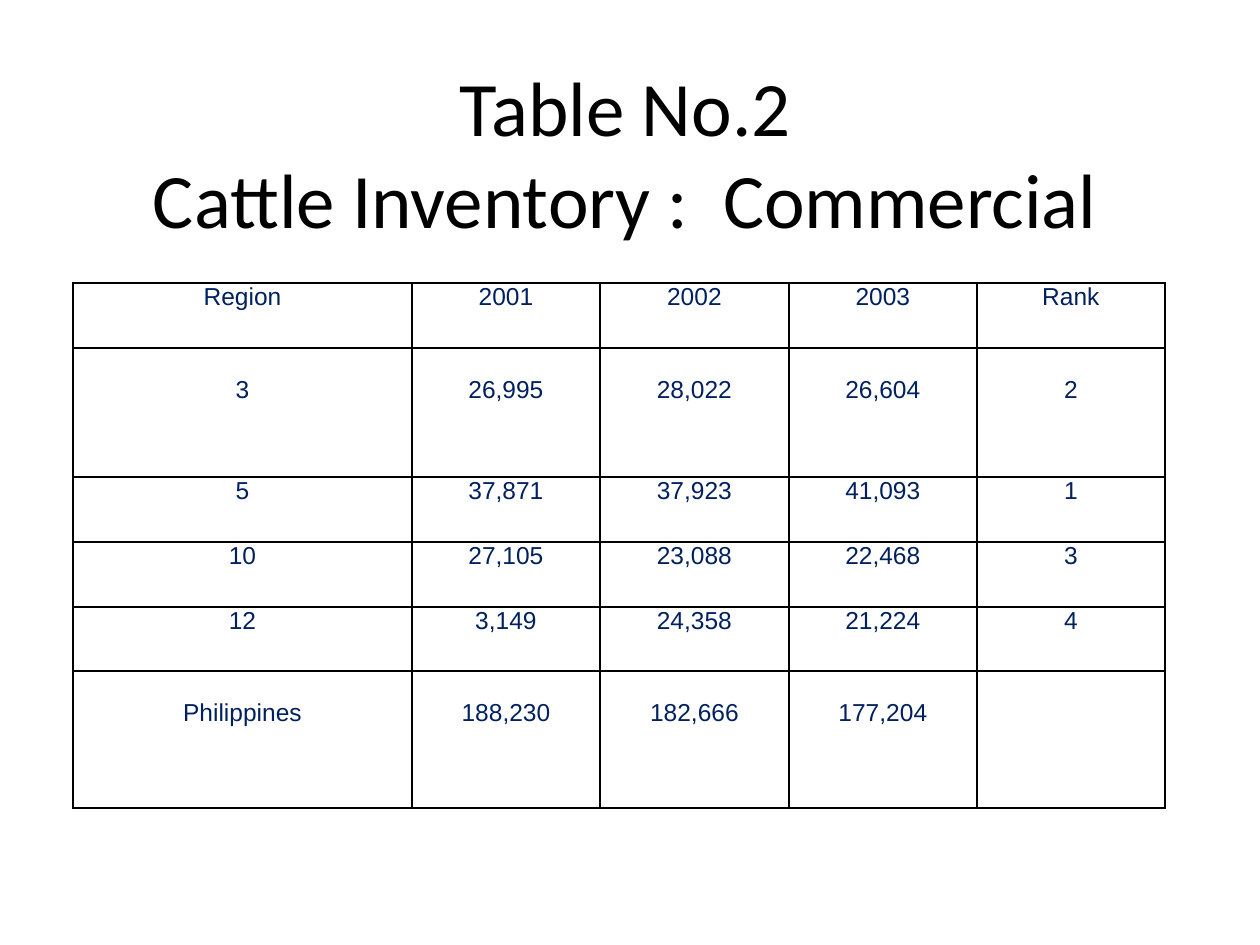
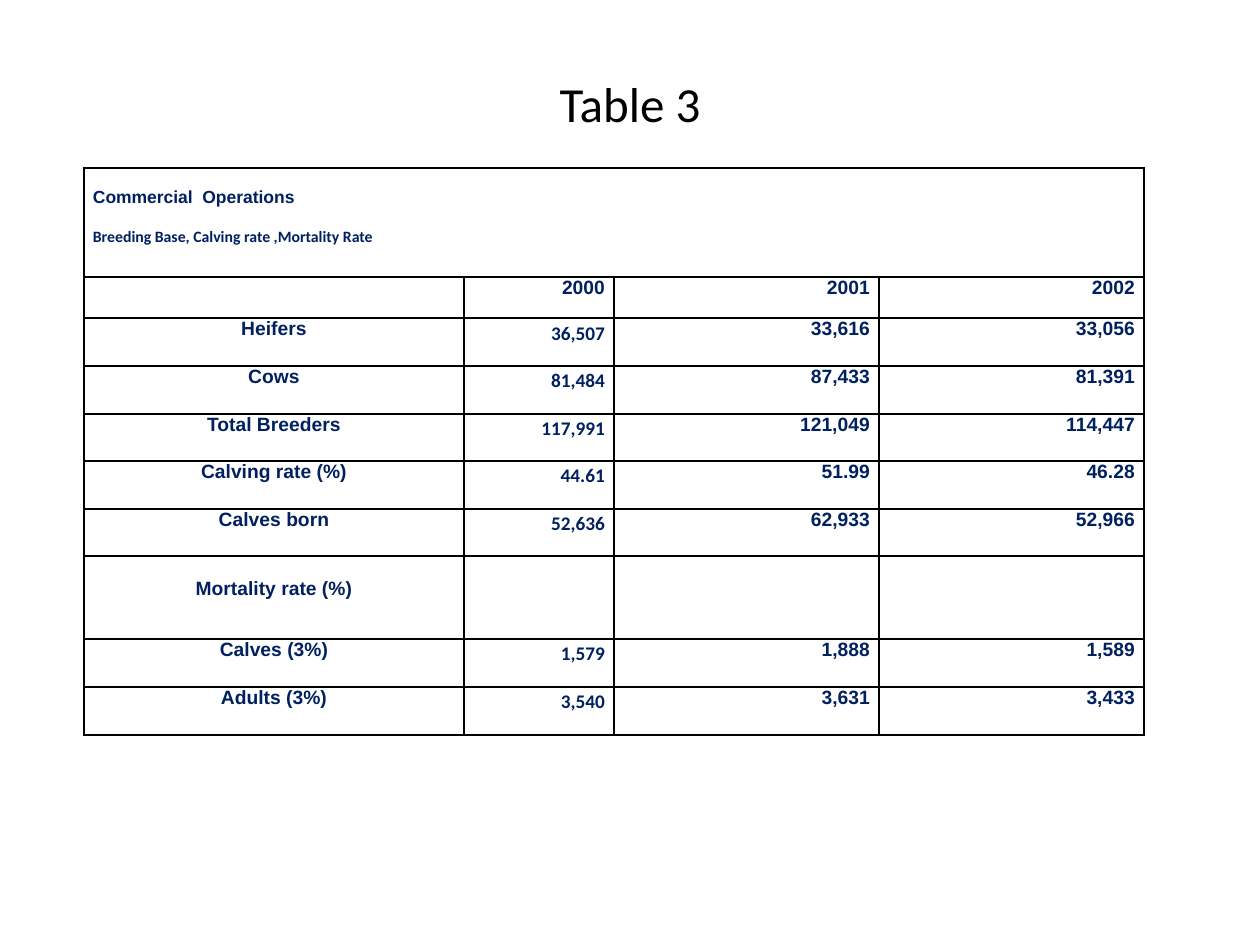
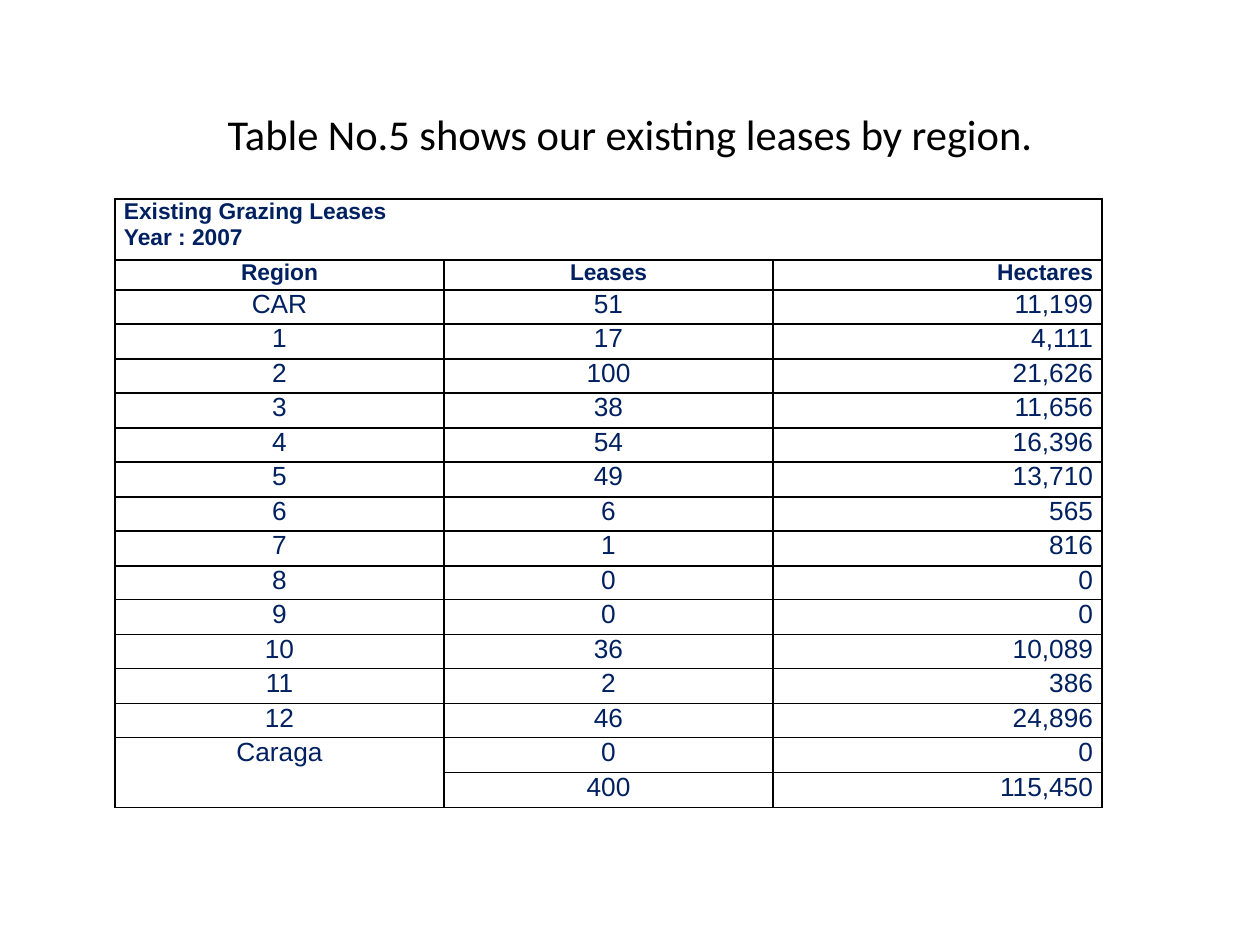
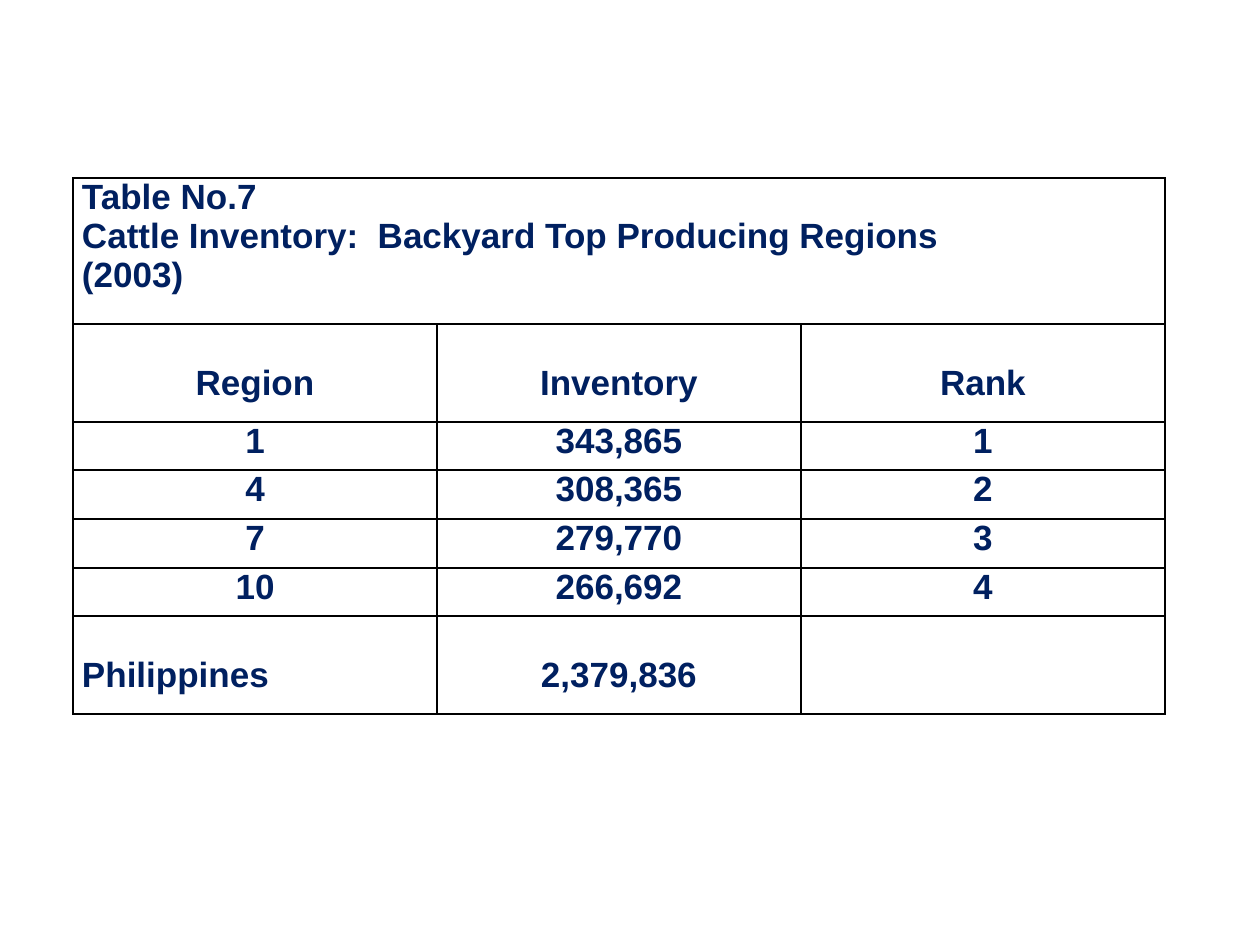
"""Builds four slides of cattle inventory and grazing lease tables."""
import itertools

import lxml.etree
import pptx
import pptx.dml.color
import pptx.enum.text
import pptx.oxml.ns
import pptx.util

PX = 914400 // 126
NAVY = pptx.dml.color.RGBColor(0x00, 0x20, 0x60)
BLACK = pptx.dml.color.RGBColor(0x00, 0x00, 0x00)
ALIGN = pptx.enum.text.PP_ALIGN
TITLE_ONLY, BLANK = 5, 6
INSET_X, INSET_Y = 13, 6
CELL_INSET = 9
BORDER_PT = 1
BASE = dict(font="Arial", size=14, bold=False, align=ALIGN.CENTER, lead=0, spacing=1, before=0)

SLIDES = [
    dict(
        title=dict(text="Table No.2\vCattle Inventory :  Commercial",
                   size=44, box=(32, 53, 1187, 292), below=94),
        at=(73, 283),
        cols=[339, 188, 189, 188, 188],
        heights=[65, 129, 65, 65, 64, 137],
        rows=[
            ["Region", "2001", "2002", "2003", "Rank"],
            ["3", "26,995", "28,022", "26,604", "2"],
            ["5", "37,871", "37,923", "41,093", "1"],
            ["10", "27,105", "23,088", "22,468", "3"],
            ["12", "3,149", "24,358", "21,224", "4"],
            ["Philippines", "188,230", "182,666", "177,204", ""],
        ],
        styles=[((1, 5), range(5), dict(lead=28))],
    ),
    dict(
        title=dict(text="Table 3", size=28, box=(63, 38, 1134, 130)),
        at=(84, 168),
        cols=[380, 150, 265, 265],
        heights=[109, 41, 48, 48, 47, 48, 47, 83, 48, 48],
        rows=[
            ["Commercial  Operations\nBreeding Base, Calving rate ,Mortality Rate"],
            ["", "2000", "2001", "2002"],
            ["Heifers", "36,507", "33,616", "33,056"],
            ["Cows", "81,484", "87,433", "81,391"],
            ["Total Breeders", "117,991", "121,049", "114,447"],
            ["Calving rate (%)", "44.61", "51.99", "46.28"],
            ["Calves born", "52,636", "62,933", "52,966"],
            ["Mortality rate (%)"],
            ["Calves (3%)", "1,579", "1,888", "1,589"],
            ["Adults (3%)", "3,540", "3,631", "3,433"],
        ],
        styles=[
            (range(10), range(4), dict(size=11, bold=True)),
            (range(1, 10), range(1, 4), dict(align=ALIGN.RIGHT)),
            (range(2, 10), [1], dict(font="Calibri", spacing=1.15)),
            ([0], [0], dict(size=10, align=ALIGN.JUSTIFY, lead=20)),
            ([7], [0], dict(lead=22)),
        ],
        last_line=dict(font="Calibri", size=9, align=ALIGN.LEFT, before=20),
        open_sides={(0, 0): "R", (0, 1): "LR", (0, 2): "LR", (0, 3): "L"},
    ),
    dict(
        title=dict(text="Table No.5 shows our existing leases by region.",
                   size=24.3, box=(63, 38, 1134, 157), above=33),
        at=(115, 199),
        cols=[329] * 3,
        heights=[61, 30] + [34, 35] * 7 + [35],
        rows=[
            ["Existing Grazing Leases\nYear : 2007"],
            ["Region", "Leases", "Hectares"],
            ["CAR", "51", "11,199"],
            ["1", "17", "4,111"],
            ["2", "100", "21,626"],
            ["3", "38", "11,656"],
            ["4", "54", "16,396"],
            ["5", "49", "13,710"],
            ["6", "6", "565"],
            ["7", "1", "816"],
            ["8", "0", "0"],
            ["9", "0", "0"],
            ["10", "36", "10,089"],
            ["11", "2", "386"],
            ["12", "46", "24,896"],
            ["Caraga", "0", "0"],
            ["", "400", "115,450"],
        ],
        styles=[
            (range(17), range(3), dict(size=15)),
            (range(17), [2], dict(align=ALIGN.RIGHT)),
            (range(2), range(3), dict(size=13, bold=True)),
            ([0], [0], dict(align=ALIGN.JUSTIFY)),
        ],
        merge_heading=True,
        open_sides={(15, 0): "B", (16, 0): "T"},
    ),
    dict(
        at=(73, 178),
        cols=[364] * 3,
        heights=[146, 98, 48, 49, 49, 48, 98],
        rows=[
            ["Table No.7\nCattle Inventory:  Backyard Top Producing Regions\n(2003)"],
            ["Region", "Inventory", "Rank"],
            ["1", "343,865", "1"],
            ["4", "308,365", "2"],
            ["7", "279,770", "3"],
            ["10", "266,692", "4"],
            ["Philippines", "2,379,836", ""],
        ],
        styles=[
            (range(7), range(3), dict(size=20, bold=True)),
            ((1, 6), range(3), dict(lead=40)),
            ([0], [0], dict(align=ALIGN.JUSTIFY)),
            ([6], [0], dict(align=ALIGN.LEFT)),
        ],
        merge_heading=True,
    ),
]


def format_paragraph(p, style, color):
    p.alignment = style["align"]
    p.line_spacing = style["spacing"]
    p.space_before = style["before"] * PX
    p.font.name = style["font"]
    p.font.size = pptx.util.Pt(style["size"])
    p.font.bold = style["bold"]
    p.font.color.rgb = color


def add_title(slide, text, size, box, above=0, below=0):
    sp = slide.shapes.title
    sp.left, sp.top, sp.width, sp.height = (n * PX for n in box)
    tf = sp.text_frame
    tf.text = text
    tf.word_wrap = True
    tf.auto_size = pptx.enum.text.MSO_AUTO_SIZE.NONE
    tf.vertical_anchor = pptx.enum.text.MSO_ANCHOR.MIDDLE
    tf.margin_left = tf.margin_right = INSET_X * PX
    tf.margin_top = (INSET_Y + above) * PX
    tf.margin_bottom = (INSET_Y + below) * PX
    format_paragraph(tf.paragraphs[0], BASE | dict(font="Calibri", size=size), BLACK)


def set_borders(cell, open_sides):
    qn = pptx.oxml.ns.qn
    tc_pr = cell._tc.get_or_add_tcPr()
    for i, side in enumerate("LRTB"):
        ln = lxml.etree.Element(qn(f"a:ln{side}"), w=str(pptx.util.Pt(BORDER_PT)))
        if side in open_sides:
            lxml.etree.SubElement(ln, qn("a:noFill"))
        else:
            fill = lxml.etree.SubElement(ln, qn("a:solidFill"))
            lxml.etree.SubElement(fill, qn("a:srgbClr"), val=str(BLACK))
        tc_pr.insert(i, ln)


def fill_cell(cell, text, style, last_line):
    cell.margin_left = cell.margin_right = CELL_INSET * PX
    cell.margin_top = style["lead"] * PX
    cell.margin_bottom = 0
    cell.fill.background()
    tf = cell.text_frame
    tf.text = text
    for p in tf.paragraphs:
        format_paragraph(p, style, NAVY)
        if not text:
            p._p.get_or_add_endParaRPr().set("sz", str(style["size"] * 100))
    if len(tf.paragraphs) > 1:
        format_paragraph(tf.paragraphs[-1], style | last_line, NAVY)


def add_table(slide, data):
    cols, heights, rows = data["cols"], data["heights"], data["rows"]
    left, top = data["at"]
    frame = slide.shapes.add_table(len(rows), len(cols), left * PX, top * PX,
                                   sum(cols) * PX, sum(heights) * PX)
    table = frame.table
    table.first_row = table.horz_banding = False
    for col, width in zip(table.columns, cols):
        col.width = width * PX
    for row, height in zip(table.rows, heights):
        row.height = height * PX
    for r, c in itertools.product(range(len(rows)), range(len(cols))):
        style = dict(BASE)
        for in_rows, in_cols, change in data["styles"]:
            if r in in_rows and c in in_cols:
                style |= change
        text = rows[r][c] if c < len(rows[r]) else ""
        cell = table.cell(r, c)
        fill_cell(cell, text, style, data.get("last_line", {}))
        set_borders(cell, data.get("open_sides", {}).get((r, c), ""))
    if data.get("merge_heading"):
        table.cell(0, 0).merge(table.cell(0, len(cols) - 1))


def main():
    prs = pptx.Presentation()
    prs.slide_width = pptx.util.Inches(10)
    prs.slide_height = pptx.util.Inches(7.5)
    for data in SLIDES:
        layout = TITLE_ONLY if "title" in data else BLANK
        slide = prs.slides.add_slide(prs.slide_layouts[layout])
        if "title" in data:
            add_title(slide, **data["title"])
        add_table(slide, data)
    prs.save("out.pptx")


if __name__ == "__main__":
    main()
